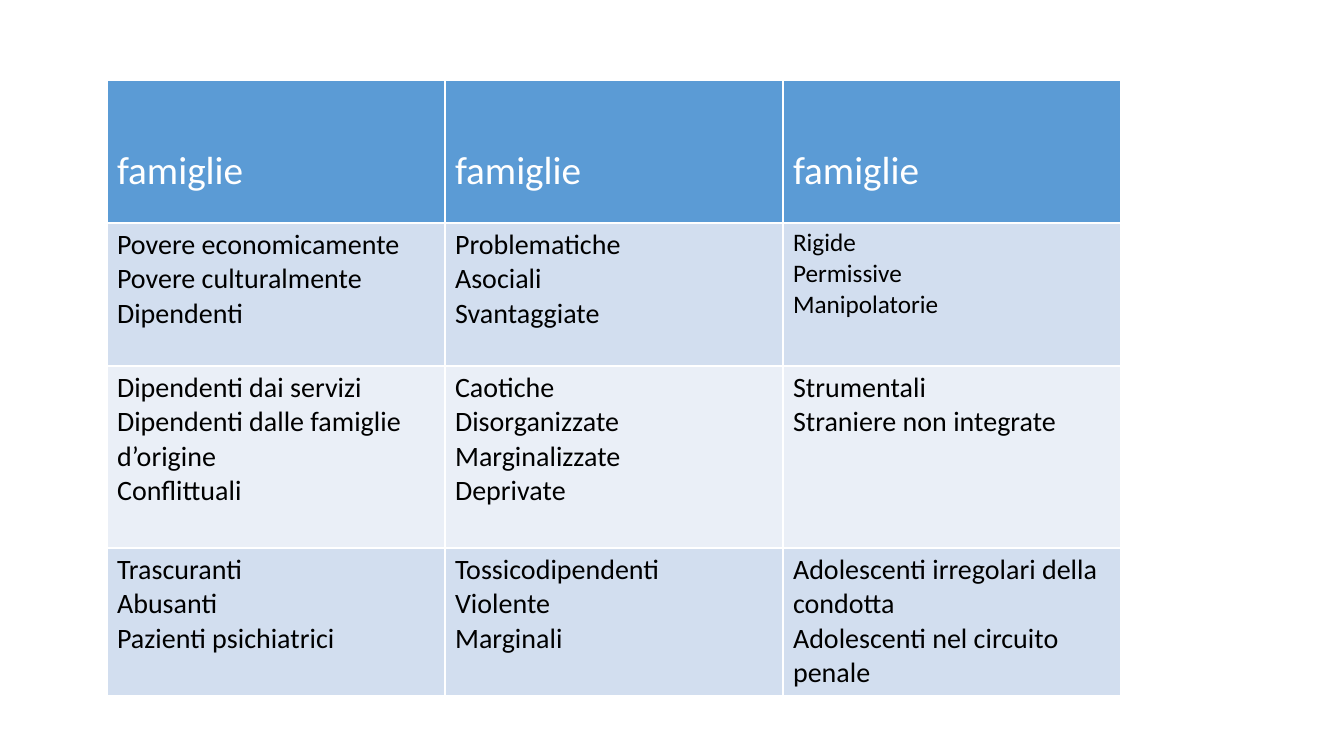
from lxml import etree
from pptx import Presentation
from pptx.dml.color import RGBColor
from pptx.enum.text import MSO_ANCHOR, PP_ALIGN
from pptx.oxml.ns import qn
from pptx.util import Emu, Pt

EMU_PER_PX = 914400 / 100.8
LEFT = PP_ALIGN.LEFT
TOP = MSO_ANCHOR.TOP

BLACK = RGBColor(0x00, 0x00, 0x00)
WHITE = RGBColor(0xFF, 0xFF, 0xFF)
HEADER_BLUE = RGBColor(0x5B, 0x9B, 0xD5)
BAND_DARK = RGBColor(0xD2, 0xDE, 0xEF)
BAND_LIGHT = RGBColor(0xEA, 0xEF, 0xF7)

FONT = "Calibri"
COLUMN_WIDTH = 338
ROW_HEIGHTS = [143, 143, 182, 147]
HEADER_TOP_MARGIN = 67
CELL_TOP_MARGIN = 5
SMALL_TEXT_CELL = (1, 2)

FAMILIES = [
    [["famiglie"], ["famiglie"], ["famiglie"]],
    [
        ["Povere economicamente", "Povere culturalmente", "Dipendenti"],
        ["Problematiche", "Asociali", "Svantaggiate"],
        ["Rigide", "Permissive", "Manipolatorie"],
    ],
    [
        ["Dipendenti dai servizi", "Dipendenti dalle famiglie d’origine", "Conflittuali"],
        ["Caotiche", "Disorganizzate", "Marginalizzate", "Deprivate"],
        ["Strumentali", "Straniere non integrate"],
    ],
    [
        ["Trascuranti", "Abusanti", "Pazienti psichiatrici"],
        ["Tossicodipendenti", "Violente", "Marginali"],
        ["Adolescenti irregolari della condotta", "Adolescenti nel circuito penale"],
    ],
]


def px(length):
    return Emu(round(length * EMU_PER_PX))


def write_text(text_frame, lines, size=20, color=BLACK):
    for index, line in enumerate(lines):
        paragraph = text_frame.paragraphs[0] if index == 0 else text_frame.add_paragraph()
        paragraph.alignment = LEFT
        run = paragraph.add_run()
        run.text = line
        run.font.name = FONT
        run.font.size = Pt(size)
        run.font.bold = False
        run.font.color.rgb = color


def set_borders(cell, color=WHITE, width=1):
    properties = cell._tc.get_or_add_tcPr()
    for position, side in enumerate(("a:lnL", "a:lnR", "a:lnT", "a:lnB")):
        line = etree.Element(qn(side), w=str(Pt(width)))
        fill = etree.SubElement(line, qn("a:solidFill"))
        etree.SubElement(fill, qn("a:srgbClr"), val=str(color))
        properties.insert(position, line)


def format_cell(cell, lines, row, column):
    is_header = row == 0
    cell.fill.solid()
    if is_header:
        cell.fill.fore_color.rgb = HEADER_BLUE
    else:
        cell.fill.fore_color.rgb = BAND_DARK if row % 2 else BAND_LIGHT
    set_borders(cell)
    cell.vertical_anchor = TOP
    cell.margin_top = px(HEADER_TOP_MARGIN if is_header else CELL_TOP_MARGIN)
    if is_header:
        write_text(cell.text_frame, lines, size=28, color=WHITE)
    else:
        write_text(cell.text_frame, lines, size=18 if (row, column) == SMALL_TEXT_CELL else 20)


def add_family_table(slide, left, top):
    row_count, column_count = len(FAMILIES), len(FAMILIES[0])
    frame = slide.shapes.add_table(
        row_count, column_count, px(left), px(top),
        px(COLUMN_WIDTH * column_count), px(sum(ROW_HEIGHTS)))
    table = frame.table
    for column in table.columns:
        column.width = px(COLUMN_WIDTH)
    for row, height in zip(table.rows, ROW_HEIGHTS):
        row.height = px(height)
    for row, cells in enumerate(FAMILIES):
        for column, lines in enumerate(cells):
            format_cell(table.cell(row, column), lines, row, column)


def main():
    presentation = Presentation()
    presentation.slide_width, presentation.slide_height = px(1344), px(756)
    # Blank layout
    slide = presentation.slides.add_slide(presentation.slide_layouts[6])

    # Table of family types
    add_family_table(slide, 107, 80)

    presentation.save("out.pptx")


if __name__ == "__main__":
    main()
